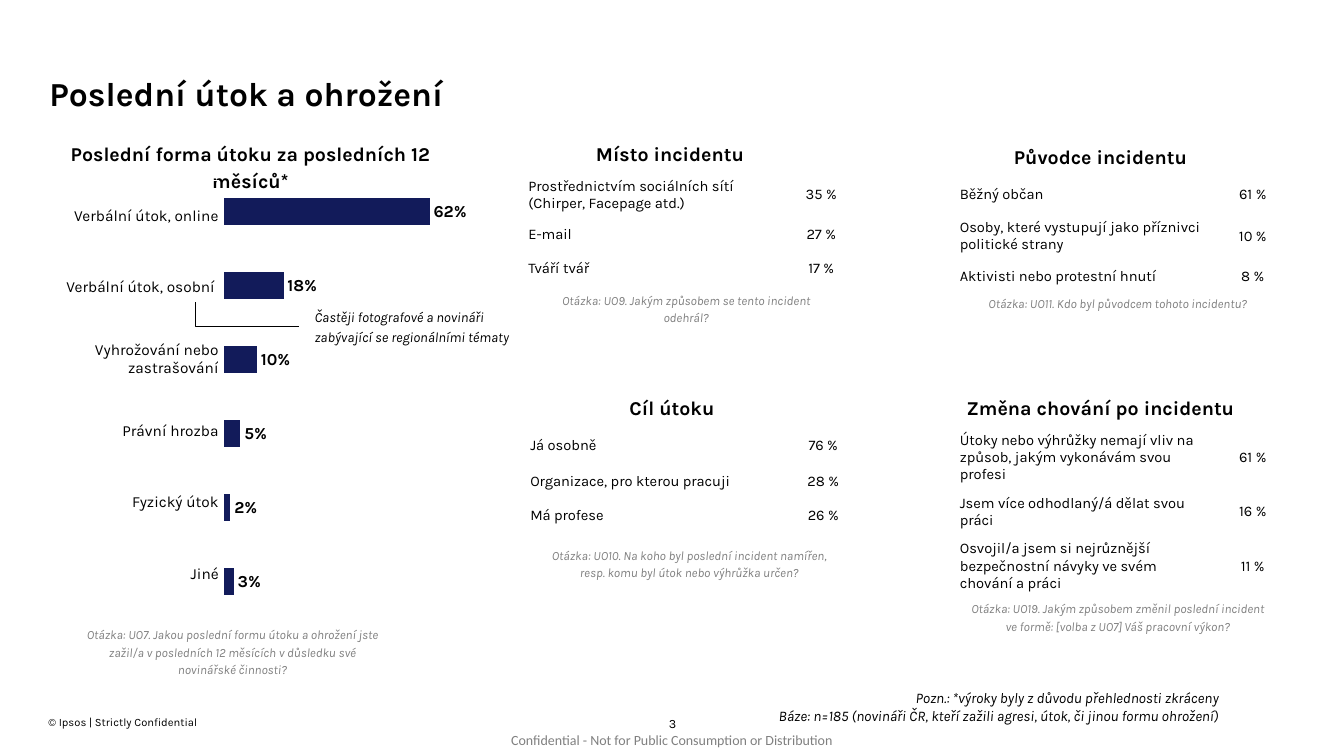
import pptx
import pptx.chart.data
import pptx.dml.color
import pptx.enum.chart
import pptx.enum.shapes
import pptx.enum.text
import pptx.oxml
import pptx.util
from pptx.util import Inches

ALIGN = pptx.enum.text.PP_ALIGN
ANCHOR = pptx.enum.text.MSO_ANCHOR
BLACK, GRAY, NAVY = "000000", "808080", "121B5A"
FONT = "Karla"


def color(value):
    return pptx.dml.color.RGBColor.from_string(value)


def element(tag, prefix="a", **attributes):
    node = pptx.oxml.parse_xml(f"<{prefix}:{tag} {pptx.oxml.ns.nsdecls(prefix)}/>")
    for name, value in attributes.items():
        node.set(name, str(value))
    return node


class SlideBuilder:
    """Adds styled elements to one slide."""

    def __init__(self, slide):
        self.slide = slide

    def style(self, paragraph, size, fill=BLACK, align=ALIGN.LEFT, bold=False, italic=False, name=FONT):
        paragraph.alignment = align
        font = paragraph.font
        font.name, font.size = name, pptx.util.Pt(size)
        font.bold, font.italic = bold, italic
        font.color.rgb = color(fill)

    def text(self, box, words, size, spacing=None, anchor=ANCHOR.TOP, **look):
        shape = self.slide.shapes.add_textbox(*map(Inches, box))
        frame = shape.text_frame
        frame.word_wrap = True
        frame.vertical_anchor = anchor
        frame.margin_left = frame.margin_right = frame.margin_top = frame.margin_bottom = 0
        frame.text = words
        for paragraph in frame.paragraphs:
            self.style(paragraph, size, **look)
            if spacing:
                paragraph.line_spacing = spacing

    def heading(self, left, top, words):
        self.text((left, top, 4.01, 0.24), words, 14, 1.15, align=ALIGN.CENTER, bold=True)

    def question(self, left, top, height, words):
        self.text((left, top, 2.91, height), words, 9, 1.15,
                  fill=GRAY, align=ALIGN.CENTER, italic=True)

    def table(self, left, top, widths, heights, rows, size, aligns, margin=None):
        box = map(Inches, (left, top, sum(widths), sum(heights)))
        table = self.slide.shapes.add_table(len(rows), len(widths), *box).table
        table.first_row = table.horz_banding = False
        for column, width in zip(table.columns, widths):
            column.width = Inches(width)
        for row, height, values in zip(table.rows, heights, rows):
            row.height = Inches(height)
            for cell, value, align in zip(row.cells, values, aligns):
                cell.fill.background()
                cell.vertical_anchor = ANCHOR.MIDDLE
                if margin is not None:
                    cell.margin_left = cell.margin_right = Inches(margin)
                    cell.margin_top = cell.margin_bottom = Inches(margin)
                cell.text = value
                self.style(cell.text_frame.paragraphs[0], size, align=align)

    def answers(self, left, top, rows):
        self.table(left, top, (2.66, 0.69), (0.38, 0.34, 0.34), rows, 10.5,
                   (ALIGN.LEFT, ALIGN.CENTER))

    def bar_chart(self, box, values):
        data = pptx.chart.data.CategoryChartData(number_format='0"%"')
        data.categories = [str(index + 1) for index in range(len(values))]
        data.add_series("Series 1", values)
        kind = pptx.enum.chart.XL_CHART_TYPE.BAR_CLUSTERED
        chart = self.slide.shapes.add_chart(kind, *map(Inches, box), data).chart
        chart.has_legend = chart.has_title = False
        chart.font.name, chart.font.size = FONT, pptx.util.Pt(10)
        chart.font.color.rgb = color(BLACK)
        chart.category_axis.reverse_order = True
        chart.value_axis.minimum_scale, chart.value_axis.maximum_scale = 0, 70
        chart.value_axis.has_major_gridlines = False
        chart.category_axis.visible = chart.value_axis.visible = False
        plot = chart.plots[0]
        plot.vary_by_categories = False
        plot.gap_width = 182
        fill = plot.series[0].format.fill
        fill.solid()
        fill.fore_color.rgb = color(NAVY)
        plot.has_data_labels = True
        labels = plot.data_labels
        labels.show_value = True
        labels.number_format, labels.number_format_is_linked = '0"%"', False
        labels.position = pptx.enum.chart.XL_LABEL_POSITION.OUTSIDE_END
        labels.font.name, labels.font.size = FONT, pptx.util.Pt(12)
        labels.font.bold = True
        labels.font.color.rgb = color(BLACK)
        area = chart._chartSpace.chart.plotArea
        for old in area.findall(pptx.oxml.ns.qn("c:layout")):
            area.remove(old)
        layout, manual = element("layout", "c"), element("manualLayout", "c")
        settings = (("layoutTarget", "inner"), ("xMode", "edge"), ("yMode", "edge"),
                    ("x", 0.02), ("y", 0.02), ("w", 0.94), ("h", 0.96))
        for tag, value in settings:
            manual.append(element(tag, "c", val=value))
        layout.append(manual)
        area.insert(0, layout)

    def elbow(self, start, end):
        kind = pptx.enum.shapes.MSO_CONNECTOR.ELBOW
        connector = self.slide.shapes.add_connector(kind, *map(Inches, start + end))
        connector.line.color.rgb = color(BLACK)
        connector.line.width = pptx.util.Pt(1)
        properties = connector._element.spPr
        guides = properties.find(".//" + pptx.oxml.ns.qn("a:avLst"))
        guides.append(element("gd", name="adj1", fmla="val 0"))
        properties.append(element("effectLst"))


SECTIONS = [
    ((4.64, 1.37), "Místo incidentu", (5.14, 1.71),
     [("Prostřednictvím sociálních sítí (Chirper, Facepage atd.)", "35 %"),
      ("E-mail", "27 %"), ("Tváří tvář", "17 %")],
     (5.35, 2.88, 0.33), "Otázka: UO9. Jakým způsobem se tento incident odehrál?"),
    ((4.66, 3.89), "Cíl útoku", (5.16, 4.23),
     [("Já osobně", "76 %"), ("Organizace, pro kterou pracuji", "28 %"), ("Má profese", "26 %")],
     (5.38, 5.41, 0.33),
     "Otázka: UO10. Na koho byl poslední incident namířen, resp. komu byl útok nebo výhrůžka určen?"),
    ((8.91, 1.4), "Původce incidentu", (9.42, 1.74),
     [("Běžný občan", "61 %"),
      ("Osoby, které vystupují jako příznivci politické strany", "10 %"),
      ("Aktivisti nebo protestní hnutí", "8 %")],
     (9.63, 2.91, 0.16), "Otázka: UO11. Kdo byl původcem tohoto incidentu?"),
    ((8.91, 3.89), "Změna chování po incidentu", (9.42, 4.23),
     [("Útoky nebo výhrůžky nemají vliv na způsob, jakým vykonávám svou profesi", "61 %"),
      ("Jsem více odhodlaný/á dělat svou práci", "16 %"),
      ("Osvojil/a jsem si nejrůznější bezpečnostní návyky ve svém chování a práci", "11 %")],
     (9.63, 5.94, 0.33),
     "Otázka: UO19. Jakým způsobem změnil poslední incident ve formě: [volba z UO7] Váš pracovní výkon?"),
]
ATTACKS = {"Verbální útok, online": 62, "Verbální útok, osobní ": 18,
           "Vyhrožování nebo zastrašování": 10, "Právní hrozba": 5,
           "Fyzický útok": 2, "Jiné": 3}


def main():
    presentation = pptx.Presentation()
    presentation.slide_width, presentation.slide_height = Inches(13.33), Inches(7.5)
    builder = SlideBuilder(presentation.slides.add_slide(presentation.slide_layouts[6]))

    builder.text((0.48, 7.1, 5.11, 0.13), "© Ipsos | Strictly Confidential", 8, anchor=ANCHOR.BOTTOM)
    builder.text((6.4, 7.09, 0.54, 0.15), "3", 9, 1.1, align=ALIGN.CENTER)
    builder.text((5.07, 7.26, 3.23, 0.17),
                 "Confidential - Not for Public Consumption or Distribution", 10,
                 fill=GRAY, name="Calibri")
    builder.text((0.49, 0.77, 12.36, 0.78), "Poslední útok a ohrožení", 24, 0.9, bold=True)
    builder.text((1.25, 6.62, 10.84, 0.78),
                 "Pozn.: *výroky byly z důvodu přehlednosti zkráceny\n"
                 "Báze: n=185 (novináři ČR, kteří zažili agresi, útok, či jinou formu ohrožení)",
                 10.5, anchor=ANCHOR.MIDDLE, align=ALIGN.RIGHT, italic=True)

    builder.heading(0.48, 1.37, "Poslední forma útoku za posledních 12 měsíců*")
    builder.bar_chart((2.17, 1.64, 2.46, 4.59), list(ATTACKS.values()))
    builder.table(0.18, 1.79, (1.99,), (0.71,) * len(ATTACKS),
                  [(attack,) for attack in ATTACKS], 11, (ALIGN.RIGHT,), margin=0)
    builder.text((3.12, 3.04, 2.2, 0.37),
                 "Častěji fotografové a novináři zabývající se regionálními tématy",
                 10, 1.15, italic=True)
    builder.elbow((1.94, 3), (2.97, 3.24))
    builder.question(0.85, 6.2, 0.5,
                     "Otázka: UO7. Jakou poslední formu útoku a ohrožení jste zažil/a "
                     "v posledních 12 měsících v důsledku své novinářské činnosti?")

    for heading_at, heading, table_at, rows, question_at, question in SECTIONS:
        builder.heading(*heading_at, heading)
        builder.answers(*table_at, rows)
        builder.question(*question_at, question)

    presentation.save("out.pptx")


if __name__ == "__main__":
    main()
